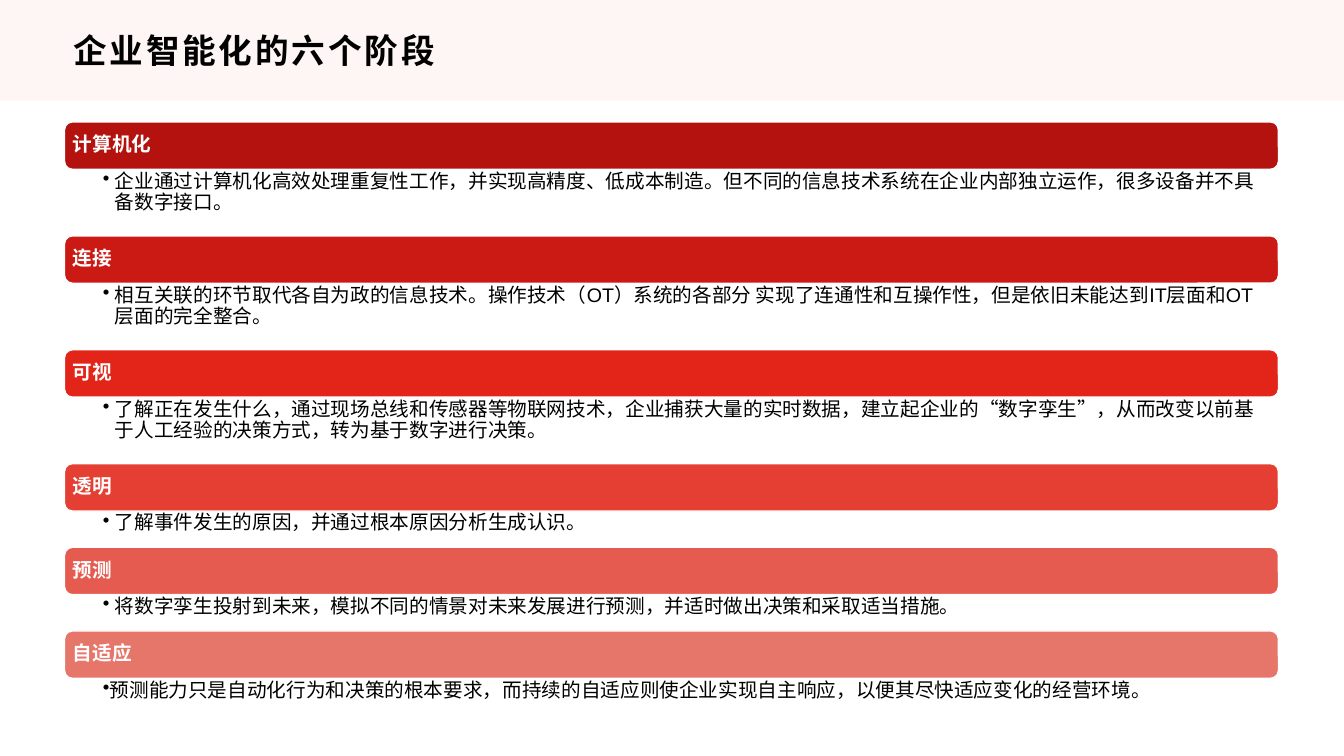
from lxml import etree
from pptx import Presentation
from pptx import util as u
from pptx.dml.color import RGBColor
from pptx.enum import shapes, text
from pptx.oxml.ns import qn

BLACK = RGBColor(0x00, 0x00, 0x00)
WHITE = RGBColor(0xFF, 0xFF, 0xFF)
BAND = RGBColor(0xFE, 0xF5, 0xF5)
REDS = [
    RGBColor(0xB4, 0x12, 0x0F),
    RGBColor(0xCB, 0x1A, 0x14),
    RGBColor(0xE2, 0x24, 0x19),
    RGBColor(0xE5, 0x3F, 0x33),
    RGBColor(0xE6, 0x5B, 0x4F),
    RGBColor(0xE7, 0x76, 0x6A),
]
CJK_FONT = "Noto Sans CJK JP"

# Stage name, description, height of description, text indent after the bullet
STAGES = [
    ("计算机化", "企业通过计算机化高效处理重复性工作，并实现高精度、低成本制造。但不同的信息技术系统在企业内部独立运作，很多设备并不具备数字接口。", 0.66, 0.12),
    ("连接", "相互关联的环节取代各自为政的信息技术。操作技术（OT）系统的各部分 实现了连通性和互操作性，但是依旧未能达到IT层面和OT层面的完全整合。", 0.66, 0.12),
    ("可视", "了解正在发生什么，通过现场总线和传感器等物联网技术，企业捕获大量的实时数据，建立起企业的“数字孪生”，从而改变以前基于人工经验的决策方式，转为基于数字进行决策。", 0.66, 0.12),
    ("透明", "了解事件发生的原因，并通过根本原因分析生成认识。", 0.36, 0.12),
    ("预测", "将数字孪生投射到未来，模拟不同的情景对未来发展进行预测，并适时做出决策和采取适当措施。", 0.36, 0.12),
    ("自适应", "预测能力只是自动化行为和决策的根本要求，而持续的自适应则使企业实现自主响应，以便其尽快适应变化的经营环境。", 0.36, 0),
]


def write_text(shape, content, size=14, font="Arial", color=BLACK, bold=False,
               insets=(0.1, 0.05, 0.1, 0.05), anchor=text.MSO_ANCHOR.MIDDLE,
               line_spacing=None, space_after=0, tracking=None, bullet_indent=None):
    frame = shape.text_frame
    frame.word_wrap = True
    frame.vertical_anchor = anchor
    (frame.margin_left, frame.margin_top,
     frame.margin_right, frame.margin_bottom) = [u.Inches(inset) for inset in insets]

    paragraph = frame.paragraphs[0]
    paragraph.alignment = text.PP_ALIGN.LEFT
    paragraph.line_spacing = line_spacing
    paragraph.space_after = u.Pt(space_after)
    if bullet_indent is not None:
        properties = paragraph._p.get_or_add_pPr()
        properties.set("marL", str(u.Inches(bullet_indent)))
        properties.set("indent", str(u.Inches(-0.12)))
        etree.SubElement(properties, qn("a:buChar")).set("char", "•")

    run = paragraph.add_run()
    run.text = content
    run.font.name = font
    run.font.size = u.Pt(size)
    run.font.bold = bold
    run.font.color.rgb = color
    run_properties = run._r.get_or_add_rPr()
    run_properties.set("lang", "zh-CN")
    if tracking:
        run_properties.set("spc", str(tracking * 100))
    etree.SubElement(run_properties, qn("a:ea")).set("typeface", CJK_FONT)


def add_block(kind, left, top, width, height, fill):
    shape = slide.shapes.add_shape(kind, u.Inches(left), u.Inches(top),
                                   u.Inches(width), u.Inches(height))
    shape.shadow.inherit = False
    shape.fill.solid()
    shape.fill.fore_color.rgb = fill
    shape.line.fill.background()
    return shape


presentation = Presentation()
presentation.slide_width = u.Inches(13.33)
presentation.slide_height = u.Inches(7.5)
slide = presentation.slides.add_slide(presentation.slide_layouts[6])

# Title band
add_block(shapes.MSO_SHAPE.RECTANGLE, 0, 0, 13.33, 1, BAND)
title = slide.shapes.add_textbox(u.Inches(0.63), u.Inches(0.26), u.Inches(12.07), u.Inches(0.48))
write_text(title, "企业智能化的六个阶段", size=24, font=CJK_FONT, bold=True, tracking=2)

# Six stages: a bar with its description below, stacked without gaps
LEFT, WIDTH, BAR_HEIGHT = 0.64, 12.04, 0.47
top = 1.21
for (name, description, height, indent), red in zip(STAGES, REDS):
    bar = add_block(shapes.MSO_SHAPE.ROUNDED_RECTANGLE, LEFT, top, WIDTH, BAR_HEIGHT, red)
    bar.line.color.rgb = WHITE
    bar.line.width = u.Pt(1)
    write_text(bar, name, color=WHITE, bold=True, insets=(0.06, 0.06, 0.06, 0.06),
               line_spacing=0.9, space_after=5)

    body = slide.shapes.add_textbox(u.Inches(LEFT), u.Inches(top + BAR_HEIGHT),
                                    u.Inches(WIDTH), u.Inches(height))
    write_text(body, description, insets=(0.38, 0.02, 0.11, 0.02), anchor=text.MSO_ANCHOR.TOP,
               line_spacing=0.9, space_after=3, bullet_indent=indent)
    top += BAR_HEIGHT + height

presentation.save("out.pptx")
